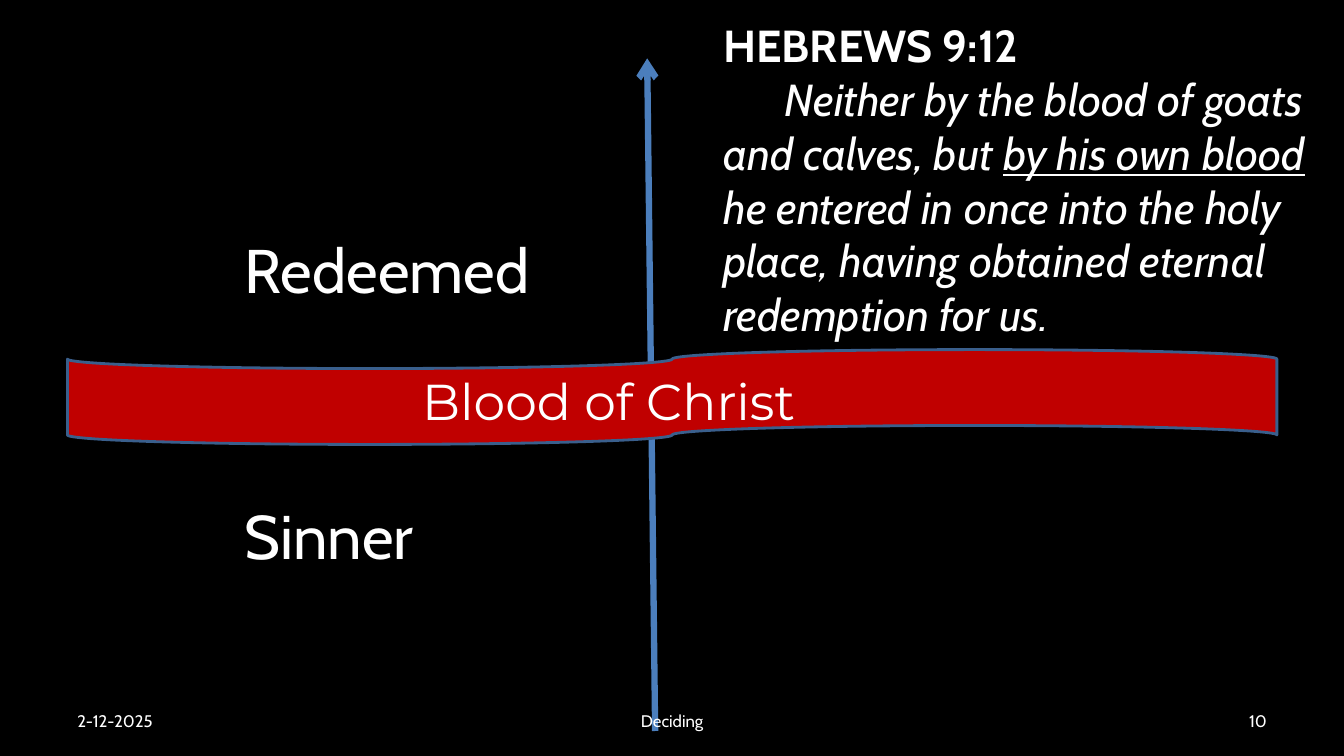
import pptx
import pptx.dml.color
import pptx.enum.shapes
import pptx.enum.text
import pptx.oxml.ns
import pptx.util
import lxml.etree

Cm = pptx.util.Cm
Pt = pptx.util.Pt
RGB = pptx.dml.color.RGBColor.from_string
ALIGN = pptx.enum.text.PP_ALIGN
ANCHOR = pptx.enum.text.MSO_ANCHOR
AUTO = pptx.enum.text.MSO_AUTO_SIZE

THEME = {
    "black": RGB("000000"),
    "white": RGB("FFFFFF"),
    "blood": RGB("C00000"),
    "blood_edge": RGB("3A5F8C"),
    "arrow": RGB("4B7EBC"),
    "body": "Cabin",
    "banner": "Montserrat",
    "state_size": Pt(44),
    "banner_size": Pt(36),
    "verse_size": Pt(32),
    "footer_size": Pt(12),
}


def add_words(paragraph, words, font, size, **formats):
    run = paragraph.add_run()
    run.text = words
    run.font.color.rgb = THEME["white"]
    for key, value in {"name": THEME[font], "size": THEME[size], **formats}.items():
        setattr(run.font, key, value)


def add_frame(left, top, width, height, **formats):
    box = slide.shapes.add_textbox(Cm(left), Cm(top), Cm(width), Cm(height))
    for key, value in formats.items():
        setattr(box.text_frame, key, value)
    return box.text_frame


deck = pptx.Presentation()
deck.slide_width = Cm(33.87)
deck.slide_height = Cm(19.05)
slide = deck.slides.add_slide(deck.slide_layouts[6])
slide.background.fill.solid()
slide.background.fill.fore_color.rgb = THEME["black"]

for state, top, width in [("Sinner", 12.42, 4.9), ("Redeemed", 5.72, 7.7)]:
    label = add_frame(5.92, top, width, 2.13, word_wrap=False, auto_size=AUTO.SHAPE_TO_FIT_TEXT)
    add_words(label.paragraphs[0], state, "body", "state_size")

upward = slide.shapes.add_connector(
    pptx.enum.shapes.MSO_CONNECTOR.STRAIGHT, Cm(16.51), Cm(18.42), Cm(16.31), Cm(1.47)
)
upward.line.color.rgb = THEME["arrow"]
upward.line.width = Pt(4.5)
arrowhead = lxml.etree.SubElement(upward.line._get_or_add_ln(), pptx.oxml.ns.qn("a:tailEnd"))
arrowhead.set("type", "arrow")
lxml.etree.SubElement(upward._element.spPr, pptx.oxml.ns.qn("a:effectLst"))

for words, left, width, align in [
    ("2-12-2025", 1.7, 7.9, ALIGN.LEFT),
    ("10", 24.28, 7.9, ALIGN.RIGHT),
    ("Deciding", 11.58, 10.72, ALIGN.CENTER),
]:
    footer = add_frame(left, 17.65, width, 1.02, word_wrap=True, vertical_anchor=ANCHOR.MIDDLE)
    footer.paragraphs[0].alignment = align
    add_words(footer.paragraphs[0], words, "body", "footer_size")

verse = add_frame(17.98, 0.33, 16.31, 8.46, word_wrap=True, auto_size=AUTO.SHAPE_TO_FIT_TEXT)
add_words(verse.paragraphs[0], "HEBREWS 9:12", "body", "verse_size", bold=True)
passage = verse.add_paragraph()
passage._p.get_or_add_pPr().set("indent", str(Cm(1.55)))
for words, underline in [
    ("Neither by the blood of goats and calves, but ", False),
    ("by his own blood ", True),
    ("he entered in once into the holy place, having obtained eternal redemption for us.", False),
]:
    add_words(passage, words, "body", "verse_size", italic=True, underline=underline)

blood = slide.shapes.add_shape(
    pptx.enum.shapes.MSO_SHAPE.FLOWCHART_PUNCHED_TAPE, Cm(1.7), Cm(8.81), Cm(30.48), Cm(2.39)
)
blood.shadow.inherit = False
blood.fill.solid()
blood.fill.fore_color.rgb = THEME["blood"]
blood.line.color.rgb = THEME["blood_edge"]
blood.line.width = Pt(2)

banner = add_frame(10.39, 9.2, 11, 1.8, word_wrap=False, auto_size=AUTO.SHAPE_TO_FIT_TEXT)
add_words(banner.paragraphs[0], "Blood of Christ", "banner", "banner_size")

deck.save("out.pptx")
